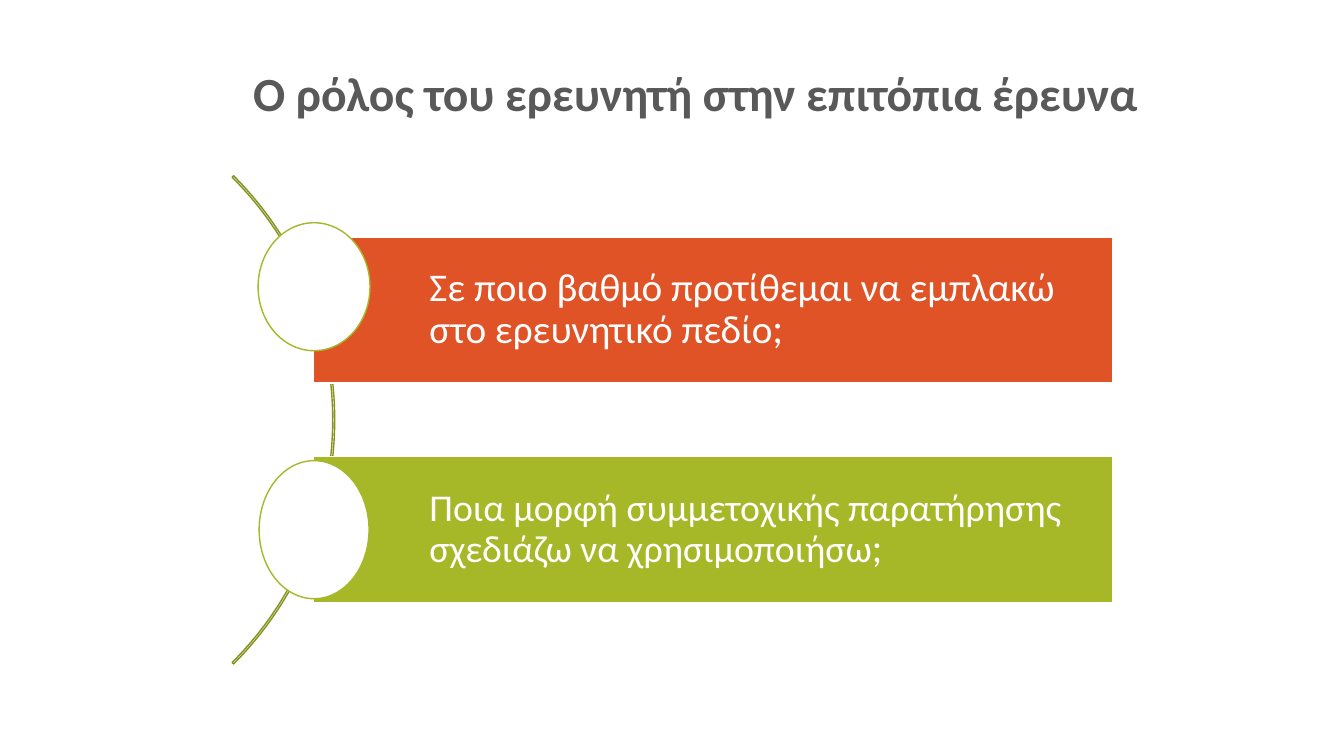
"""Build a slide with two questions on the researcher's role in fieldwork."""
from dataclasses import dataclass

from pptx import Presentation
from pptx.dml.color import RGBColor
from pptx.enum import shapes, text
from pptx.util import Inches, Pt

TITLE = "Ο ρόλος του ερευνητή στην επιτόπια έρευνα"
QUESTIONS = [
    {"text": "Σε ποιο βαθμό προτίθεμαι να εμπλακώ στο ερευνητικό πεδίο",
     "fill": "DF5327", "size": 28, "pad": 0.08, "circle": (2.56, 2.21, 1.11, 1.27)},
    {"text": "Ποια μορφή συμμετοχικής παρατήρησης σχεδιάζω να χρησιμοποιήσω",
     "fill": "A6B727", "size": 27, "pad": 0.07, "circle": (2.57, 4.57, 1.09, 1.37)},
]
TITLE_BOX = (2.41, 0.33, 10.25, 0.93)
ARC_BOX = (-3.53, 0.74, 6.85, 6.85)
ARC_ADJUSTMENTS = (189, 27, 0.003)
BAR_LEFT, BAR_TOP, BAR_WIDTH, BAR_HEIGHT = 3.11, 2.35, 7.93, 1.45
BAR_STEP = 2.18
TEXT_INDENT = 1.15


@dataclass(frozen=True)
class Theme:
    """Colours, fonts and type sizes."""
    title: str = "595959"
    white: str = "FFFFFF"
    arc: str = "85931F"
    ring: str = "A6B727"
    font: str = "Calibri"
    mark_font: str = "Lato"
    title_size: int = 34


THEME = Theme()


def add_figure(s, kind, box, line, fill=None):
    """Add a shape with a thin outline and an optional fill."""
    sp = s.shapes.add_shape(kind, *map(Inches, box))
    sp.shadow.inherit = False
    sp.line.color.rgb = RGBColor.from_string(line)
    sp.line.width = Pt(1)
    if fill:
        sp.fill.solid()
        sp.fill.fore_color.rgb = RGBColor.from_string(fill)
    else:
        sp.fill.background()
    return sp


def style_run(r, size, color, font=THEME.font, bold=False):
    """Format one run."""
    r.font.size = Pt(size)
    r.font.name = font
    r.font.bold = bold
    r.font.color.rgb = RGBColor.from_string(color)


def add_title(s):
    """Place and format the slide title."""
    sp = s.shapes.title
    sp.left, sp.top, sp.width, sp.height = map(Inches, TITLE_BOX)
    tf = sp.text_frame
    tf.text = TITLE
    tf.word_wrap = True
    tf.auto_size = text.MSO_AUTO_SIZE.NONE
    tf.vertical_anchor = text.MSO_ANCHOR.BOTTOM
    p = tf.paragraphs[0]
    p.alignment = text.PP_ALIGN.LEFT
    p.line_spacing = 0.9
    style_run(p.runs[0], THEME.title_size, THEME.title, bold=True)


def add_question(s, index, question):
    """Add a question bar and the circle at its left end."""
    box = (BAR_LEFT, BAR_TOP + index * BAR_STEP, BAR_WIDTH, BAR_HEIGHT)
    bar = add_figure(s, shapes.MSO_SHAPE.RECTANGLE, box, THEME.white, question["fill"])
    tf = bar.text_frame
    tf.word_wrap = True
    tf.vertical_anchor = text.MSO_ANCHOR.MIDDLE
    tf.margin_left = Inches(TEXT_INDENT)
    tf.margin_top = tf.margin_right = tf.margin_bottom = Inches(question["pad"])
    p = tf.paragraphs[0]
    p.alignment = text.PP_ALIGN.LEFT
    p.line_spacing = 0.9
    for words, font in ((question["text"], THEME.font), (";", THEME.mark_font)):
        r = p.add_run()
        r.text = words
        style_run(r, question["size"], THEME.white, font)
    add_figure(s, shapes.MSO_SHAPE.OVAL, question["circle"], THEME.ring, THEME.white)


def main():
    """Build and save the slide."""
    prs = Presentation()
    prs.slide_width, prs.slide_height = Inches(13.33), Inches(7.5)
    s = prs.slides.add_slide(prs.slide_layouts[5])
    add_title(s)
    arc = add_figure(s, shapes.MSO_SHAPE.BLOCK_ARC, ARC_BOX, THEME.arc)
    for i, value in enumerate(ARC_ADJUSTMENTS):
        arc.adjustments[i] = value
    for i, question in enumerate(QUESTIONS):
        add_question(s, i, question)
    prs.save("out.pptx")


if __name__ == "__main__":
    main()
